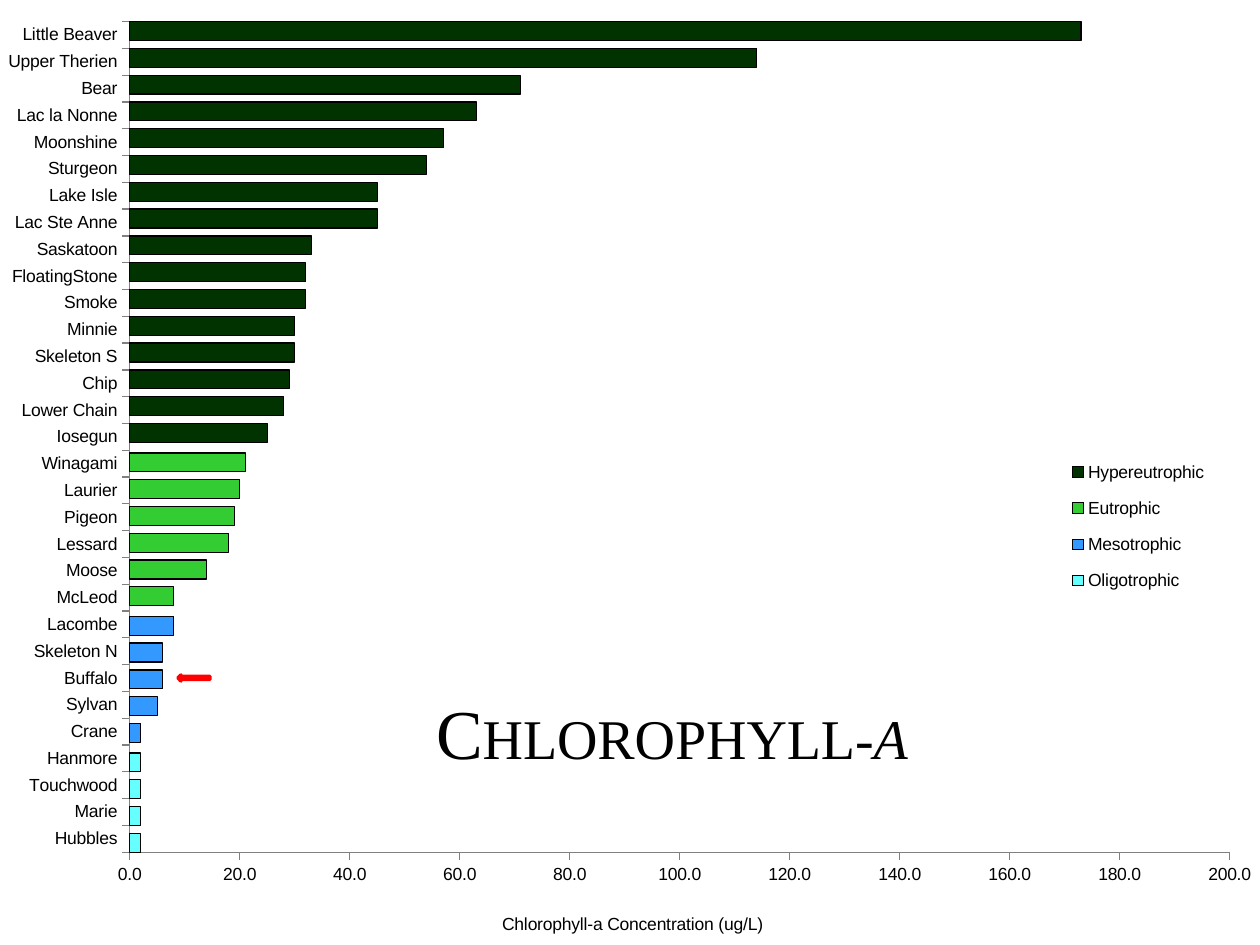
from lxml import etree
from pptx import Presentation
from pptx.chart.data import CategoryChartData
from pptx.dml.color import RGBColor
from pptx.enum.chart import XL_CHART_TYPE, XL_LEGEND_POSITION, XL_TICK_MARK
from pptx.enum.shapes import MSO_SHAPE
from pptx.enum.text import MSO_ANCHOR, PP_ALIGN
from pptx.oxml.ns import qn
from pptx.util import Emu, Pt

BAR = XL_CHART_TYPE.BAR_CLUSTERED
LEGEND_RIGHT = XL_LEGEND_POSITION.RIGHT
TICK_OUT, TICK_NONE = XL_TICK_MARK.OUTSIDE, XL_TICK_MARK.NONE
LEFT_ARROW = MSO_SHAPE.LEFT_ARROW
CENTER, BOTTOM = PP_ALIGN.CENTER, MSO_ANCHOR.BOTTOM

PX = 914400 // 126
WIDTH, HEIGHT = 1260, 945
BLACK, GRAY, RED = "000000", "808080", "FF0000"

# Lakes from the bottom of the chart to the top, by trophic state
GROUPS = [
    ("Oligotrophic", "66FFFF",
     [("Hubbles", 2), ("Marie", 2), ("Touchwood", 2), ("Hanmore", 2)]),
    ("Mesotrophic", "3399FF",
     [("Crane", 2), ("Sylvan", 5), ("Buffalo", 6), ("Skeleton N", 6),
      ("Lacombe", 8)]),
    ("Eutrophic", "33CC33",
     [("McLeod", 8), ("Moose", 14), ("Lessard", 18), ("Pigeon", 19),
      ("Laurier", 20), ("Winagami", 21)]),
    ("Hypereutrophic", "003300",
     [("Iosegun", 25), ("Lower Chain", 28), ("Chip", 29), ("Skeleton S", 30),
      ("Minnie", 30), ("Smoke", 32), ("FloatingStone", 32),
      ("Saskatoon", 33), ("Lac Ste Anne", 45), ("Lake Isle", 45),
      ("Sturgeon", 54), ("Moonshine", 57), ("Lac la Nonne", 63),
      ("Bear", 71), ("Upper Therien", 114), ("Little Beaver", 173)]),
]


def color(value):
    return RGBColor.from_string(value)


def box(*lengths):
    return [Emu(length * PX) for length in lengths]


def set_all(target, values):
    for name, value in values.items():
        setattr(target, name, value)


def paint(part, fill, line, width):
    part.fill.solid()
    part.fill.fore_color.rgb = color(fill)
    part.line.color.rgb = color(line)
    part.line.width = Pt(width)


def format_font(font, name, size, **values):
    set_all(font, {"name": name, "size": Pt(size), **values})
    font.color.rgb = color(BLACK)


def place(element, index, **layout):
    """Give a chart part a manual layout as its child number index."""
    for old in element.findall(qn("c:layout")):
        element.remove(old)
    outer = etree.Element(qn("c:layout"))
    manual = etree.SubElement(outer, qn("c:manualLayout"))
    for tag, value in layout.items():
        etree.SubElement(manual, qn(f"c:{tag}")).set("val", str(value))
    element.insert(index, outer)


def lake_data():
    data = CategoryChartData(number_format="0.0")
    data.categories = [lake for _, _, lakes in GROUPS for lake, _ in lakes]
    total = sum(len(lakes) for _, _, lakes in GROUPS)
    start = 0
    for name, _, lakes in GROUPS:
        values = [None] * total
        values[start:start + len(lakes)] = [value for _, value in lakes]
        data.add_series(name, values)
        start += len(lakes)
    return data


def format_axis(axis, **values):
    set_all(axis, {"has_major_gridlines": False, "major_tick_mark": TICK_OUT,
                   "minor_tick_mark": TICK_NONE, **values})
    axis.format.line.color.rgb = color(GRAY)
    axis.format.line.width = Pt(0.75)


def add_lake_chart(slide):
    chart = slide.shapes.add_chart(
        BAR, *box(0, 0, WIDTH, HEIGHT), lake_data()).chart
    set_all(chart, {"has_title": False, "has_legend": True})
    format_font(chart.font, "Arial", 10)
    set_all(chart.legend, {"position": LEGEND_RIGHT,
                           "include_in_layout": False})

    # Bars
    plot = chart.plots[0]
    set_all(plot, {"gap_width": 0, "overlap": 86, "vary_by_categories": False})
    for series, (_, fill, _) in zip(plot.series, GROUPS):
        paint(series.format, fill, BLACK, 0.75)

    # Axes
    format_axis(chart.category_axis)
    value_axis = chart.value_axis
    format_axis(value_axis, minimum_scale=0, maximum_scale=200, major_unit=20)
    set_all(value_axis.tick_labels, {"number_format": "0.0",
                                     "number_format_is_linked": False})
    frame = value_axis.axis_title.text_frame
    frame.text = "Chlorophyll-a Concentration (ug/L)"
    format_font(frame.paragraphs[0].runs[0].font, "Arial", 10, bold=False)

    # Positions as shares of the chart
    area = chart.element.find(f".//{qn('c:plotArea')}")
    place(area, 0, layoutTarget="inner", xMode="edge", yMode="edge",
          x=0.103, y=0.023, w=0.873, h=0.879)
    place(area.find(f"{qn('c:valAx')}/{qn('c:title')}"), 1,
          xMode="edge", yMode="edge", x=0.396, y=0.962)
    place(chart.element.find(f".//{qn('c:legend')}"), 1,
          xMode="edge", yMode="edge", x=0.846, y=0.472, w=0.115, h=0.17)


def add_marker(slide):
    arrow = slide.shapes.add_shape(LEFT_ARROW, *box(178, 675, 32, 6))
    arrow.shadow.inherit = False
    paint(arrow, RED, RED, 2)
    return arrow


def format_title(title):
    left, top, width, height = box(346, 683, 652, 97)
    set_all(title, {"left": left, "top": top, "width": width,
                    "height": height})
    set_all(title.text_frame, {"word_wrap": True, "vertical_anchor": BOTTOM})
    paragraph = title.text_frame.paragraphs[0]
    paragraph.alignment = CENTER
    for text, italic in (("Chlorophyll-", False), ("a", True)):
        run = paragraph.add_run()
        run.text = text
        format_font(run.font, "Times New Roman", 40, italic=italic)
        run.font._element.set("cap", "small")


def main():
    presentation = Presentation()
    presentation.slide_width, presentation.slide_height = box(WIDTH, HEIGHT)
    slide = presentation.slides.add_slide(presentation.slide_layouts[5])
    add_lake_chart(slide)
    arrow = add_marker(slide)
    title = slide.shapes.title
    format_title(title)
    arrow.element.addnext(title.element)  # title in front of the chart
    presentation.save("out.pptx")


if __name__ == "__main__":
    main()
